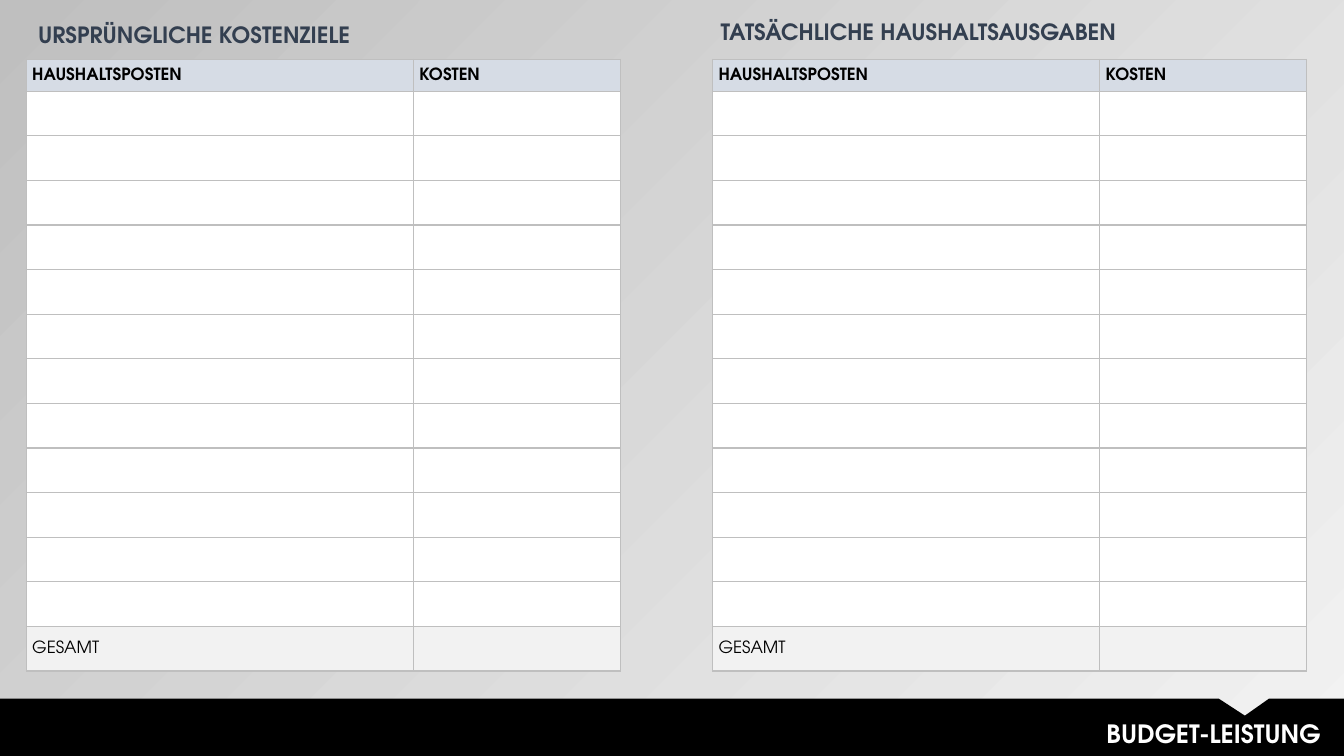
from lxml import etree
from pptx import Presentation
from pptx import util as u
from pptx.dml import color
from pptx.enum import text
from pptx.oxml import ns

Pt = u.Pt
FONT = "TeX Gyre Adventor"
COLORS = {
    "bar": "000000", "bar_text": "FFFFFF", "title": "333F50", "text": "000000",
    "header": "D6DCE5", "item": "FFFFFF", "total": "F2F2F2", "border": "BFBFBF",
    "bg_light": "F2F2F2", "bg_dark": "BFBFBF",
}
WIDTH, HEIGHT = 960, 540
BAR_TOP = 499
COLUMNS = [276.5, 146.5 + 1.5]
ITEM_COUNT = 12
HEADER_HEIGHT, ROW_HEIGHT = 22.6, 31.87
TABLE_TOP = 42.5


def rgb(name):
    return color.RGBColor.from_string(COLORS[name])


class BudgetSlide:
    def __init__(self, prs):
        self.slide = prs.slides.add_slide(prs.slide_layouts[6])

    def background(self):
        fill = self.slide.background.fill
        fill.gradient()
        fill.gradient_angle = 135
        for stop, name in zip(fill.gradient_stops, ("bg_light", "bg_dark")):
            stop.color.rgb = rgb(name)

    def run(self, p, words, size, name, bold=True):
        r = p.add_run()
        r.text = words
        r.font.name, r.font.size, r.font.bold = FONT, Pt(size), bold
        r.font.color.rgb = rgb(name)

    def outline(self, points, name):
        points = [(Pt(x), Pt(y)) for x, y in points]
        builder = self.slide.shapes.build_freeform(*points[0])
        builder.add_line_segments(points[1:], close=True)
        sp = builder.convert_to_shape()
        sp.shadow.inherit = False
        sp.fill.solid()
        sp.fill.fore_color.rgb = rgb(name)
        sp.line.fill.background()

    def label(self, box, words, size, name, align, margins=(7.2, 3.6), line=None):
        sp = self.slide.shapes.add_textbox(*map(Pt, box))
        tf = sp.text_frame
        tf.word_wrap = True
        tf.auto_size = text.MSO_AUTO_SIZE.SHAPE_TO_FIT_TEXT
        tf.margin_left = tf.margin_right = Pt(margins[0])
        tf.margin_top = tf.margin_bottom = Pt(margins[1])
        p = tf.paragraphs[0]
        p.alignment = align
        if line:
            p.line_spacing = Pt(line)
            p.space_before = Pt(size * 0.2)
        self.run(p, words, size, name)

    def cell(self, cell, words, fill, bold):
        # Borders precede the fill in the cell properties.
        props = cell._tc.get_or_add_tcPr()
        for side in ("a:lnL", "a:lnR", "a:lnT", "a:lnB"):
            ln = etree.SubElement(props, ns.qn(side), w=str(Pt(1)))
            solid = etree.SubElement(ln, ns.qn("a:solidFill"))
            etree.SubElement(solid, ns.qn("a:srgbClr"), val=COLORS["border"])
        cell.fill.solid()
        cell.fill.fore_color.rgb = rgb(fill)
        if words:
            cell.vertical_anchor = text.MSO_ANCHOR.MIDDLE
            cell.margin_left = cell.margin_right = Pt(4.3)
            cell.margin_top = cell.margin_bottom = 0
            p = cell.text_frame.paragraphs[0]
            p.line_spacing = 1.07
            self.run(p, words, 12, "text", bold)

    def cost_table(self, left):
        rows = [("header", ("HAUSHALTSPOSTEN", "KOSTEN"))]
        rows += [("item", ("", ""))] * ITEM_COUNT
        rows += [("total", ("GESAMT", ""))]
        heights = [HEADER_HEIGHT] + [ROW_HEIGHT] * (ITEM_COUNT + 1)
        frame = self.slide.shapes.add_table(
            len(rows), len(COLUMNS), Pt(left), Pt(TABLE_TOP),
            Pt(sum(COLUMNS)), Pt(sum(heights)))
        table = frame.table
        table.horz_banding = table.first_row = False
        for column, width in zip(table.columns, COLUMNS):
            column.width = Pt(width)
        for row, height, (kind, words) in zip(table.rows, heights, rows):
            row.height = Pt(height)
            for cell, word in zip(row.cells, words):
                self.cell(cell, word, kind, kind == "header")


def main():
    prs = Presentation()
    prs.slide_width, prs.slide_height = Pt(WIDTH), Pt(HEIGHT)
    budget = BudgetSlide(prs)
    budget.background()
    budget.outline([(0, BAR_TOP), (870.5, BAR_TOP), (889.2, 511.2), (906.5, BAR_TOP),
                    (WIDTH, BAR_TOP), (WIDTH, HEIGHT), (0, HEIGHT)], "bar")
    budget.label((298, 509.8, 652.3, 28.8), "BUDGET-LEISTUNG", 18, "bar_text",
                 text.PP_ALIGN.RIGHT)
    for title, title_left, title_top, table_left in (
            ("URSPRÜNGLICHE KOSTENZIELE", 18.7, 8.6, 18.7),
            ("TATSÄCHLICHE HAUSHALTSAUSGABEN", 506.2, 6.2, 509)):
        budget.label((title_left, title_top, 401.8, 28.8), title, 16, "title",
                     text.PP_ALIGN.LEFT, margins=(8.6, 4.3), line=21.5)
        budget.cost_table(table_left)
    prs.save("out.pptx")


if __name__ == "__main__":
    main()
